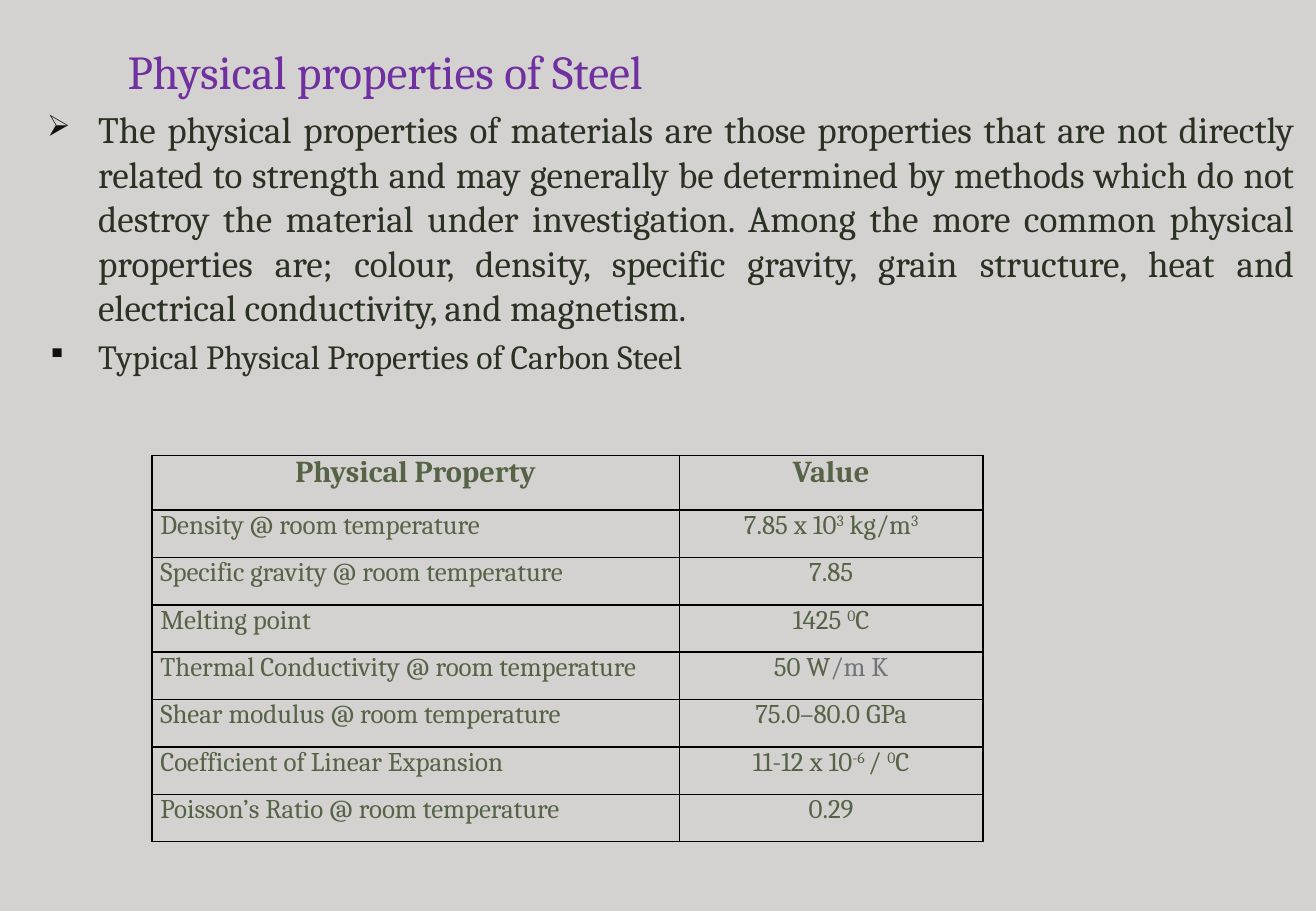
from lxml import etree
from pptx import Presentation
from pptx.dml.color import RGBColor
from pptx.enum.text import MSO_ANCHOR, PP_ALIGN
from pptx.oxml.ns import qn
from pptx.util import Inches, Pt

LEFT, CENTER, JUSTIFY = PP_ALIGN.LEFT, PP_ALIGN.CENTER, PP_ALIGN.JUSTIFY
TOP, MIDDLE = MSO_ANCHOR.TOP, MSO_ANCHOR.MIDDLE

COLORS = {
    "background": "D4D2D0",
    "title": "7030A0",
    "body": "2B3123",
    "bullet": "0E100C",
    "table": "566347",
    "unit": "70757A",
    "border": "000000",
}

BULLETS = [
    ("➢", 22, "The physical properties of materials are those properties that are not "
     "directly related to strength and may generally be determined by methods which do not "
     "destroy the material under investigation. Among the more common physical properties "
     "are; colour, density, specific gravity, grain structure, heat and electrical "
     "conductivity, and magnetism."),
    ("▪", 20, "Typical Physical Properties of Carbon Steel"),
]

PROPERTIES = [
    ("Physical Property", [("Value", "")]),
    ("Density @ room temperature",
     [("7.85 x 10", ""), ("3", "super"), (" kg/m", ""), ("3", "super")]),
    ("Specific gravity @ room temperature", [("7.85", "")]),
    ("Melting point", [("1425 ", ""), ("0", "super"), ("C", "")]),
    ("Thermal Conductivity @ room temperature", [("50 W", ""), ("/m K", "unit")]),
    ("Shear modulus @ room temperature", [("75.0–80.0 GPa", "")]),
    ("Coefficient of Linear Expansion",
     [("11-12 x 10", ""), ("-6 ", "super"), ("/ ", ""), ("0", "super"), ("C", "")]),
    ("Poisson’s Ratio @ room temperature", [("0.29", "")]),
]


class SteelSlide:
    font_name = "Cambria"

    def __init__(self, deck):
        self.page = deck.slides.add_slide(deck.slide_layouts[6])
        fill = self.page.background.fill
        fill.solid()
        fill.fore_color.rgb = RGBColor.from_string(COLORS["background"])

    def style(self, span, size, color, bold=False):
        span.font.name = self.font_name
        span.font.size = Pt(size)
        span.font.bold = bold
        span.font.color.rgb = RGBColor.from_string(COLORS[color])

    def text_box(self, left, top, width, height, anchor=TOP):
        box = self.page.shapes.add_textbox(
            Inches(left), Inches(top), Inches(width), Inches(height))
        frame = box.text_frame
        frame.word_wrap = True
        frame.vertical_anchor = anchor
        return frame

    def title(self, text, *place):
        frame = self.text_box(*place, anchor=MIDDLE)
        frame.margin_left = frame.margin_right = Inches(0.05)
        frame.text = text
        self.style(frame.paragraphs[0].runs[0], 28, "title")

    def bullet(self, para, mark):
        properties = para._p.get_or_add_pPr()
        properties.set("marL", str(Inches(0.46)))
        properties.set("indent", str(Inches(-0.42)))
        color = etree.SubElement(properties, qn("a:buClr"))
        etree.SubElement(color, qn("a:srgbClr"), val=COLORS["bullet"])
        etree.SubElement(properties, qn("a:buSzPct"), val="80000")
        etree.SubElement(properties, qn("a:buChar"), char=mark)

    def bullet_list(self, items, *place):
        frame = self.text_box(*place)
        frame.text = "\n".join(text for mark, size, text in items)
        for index, (para, (mark, size, text)) in enumerate(zip(frame.paragraphs, items)):
            self.bullet(para, mark)
            para.alignment = JUSTIFY
            if index:
                para.space_before = Pt(4)
            self.style(para.runs[0], size, "body")

    def cell(self, cell, pieces, alignment, header):
        cell.margin_left = cell.margin_right = Inches(0.07)
        cell.margin_top = cell.margin_bottom = 0
        cell.fill.background()
        for index, side in enumerate(("a:lnL", "a:lnR", "a:lnT", "a:lnB")):
            line = etree.Element(qn(side), w=str(Pt(1)))
            fill = etree.SubElement(line, qn("a:solidFill"))
            etree.SubElement(fill, qn("a:srgbClr"), val=COLORS["border"])
            cell._tc.get_or_add_tcPr().insert(index, line)
        para = cell.text_frame.paragraphs[0]
        para.alignment = alignment
        for text, kind in pieces:
            span = para.add_run()
            span.text = text
            self.style(span, 18 if header else 16,
                       "unit" if kind == "unit" else "table", header)
            if kind == "super":
                span._r.get_or_add_rPr().set("baseline", "30000")

    def table(self, rows, left, top, widths, header_height, row_height):
        height = header_height + row_height * (len(rows) - 1)
        table = self.page.shapes.add_table(
            len(rows), len(widths), Inches(left), Inches(top),
            Inches(sum(widths)), Inches(height)).table
        table.first_row = table.horz_banding = False
        for column, width in zip(table.columns, widths):
            column.width = Inches(width)
        for index, (name, value) in enumerate(rows):
            header = index == 0
            table.rows[index].height = Inches(header_height if header else row_height)
            self.cell(table.cell(index, 0), [(name, "")], CENTER if header else LEFT, header)
            self.cell(table.cell(index, 1), value, CENTER, header)


def main():
    deck = Presentation()
    deck.slide_width, deck.slide_height = Inches(10.83), Inches(7.5)
    slide = SteelSlide(deck)
    slide.bullet_list(BULLETS, 0.25, 0.83, 10.5, 6.5)
    slide.title("Physical properties of Steel", 1, 0.33, 4.67, 0.5)
    slide.table(PROPERTIES, 1.25, 3.75, (4.34, 2.5), 0.45, 0.39)
    deck.save("out.pptx")


if __name__ == "__main__":
    main()
